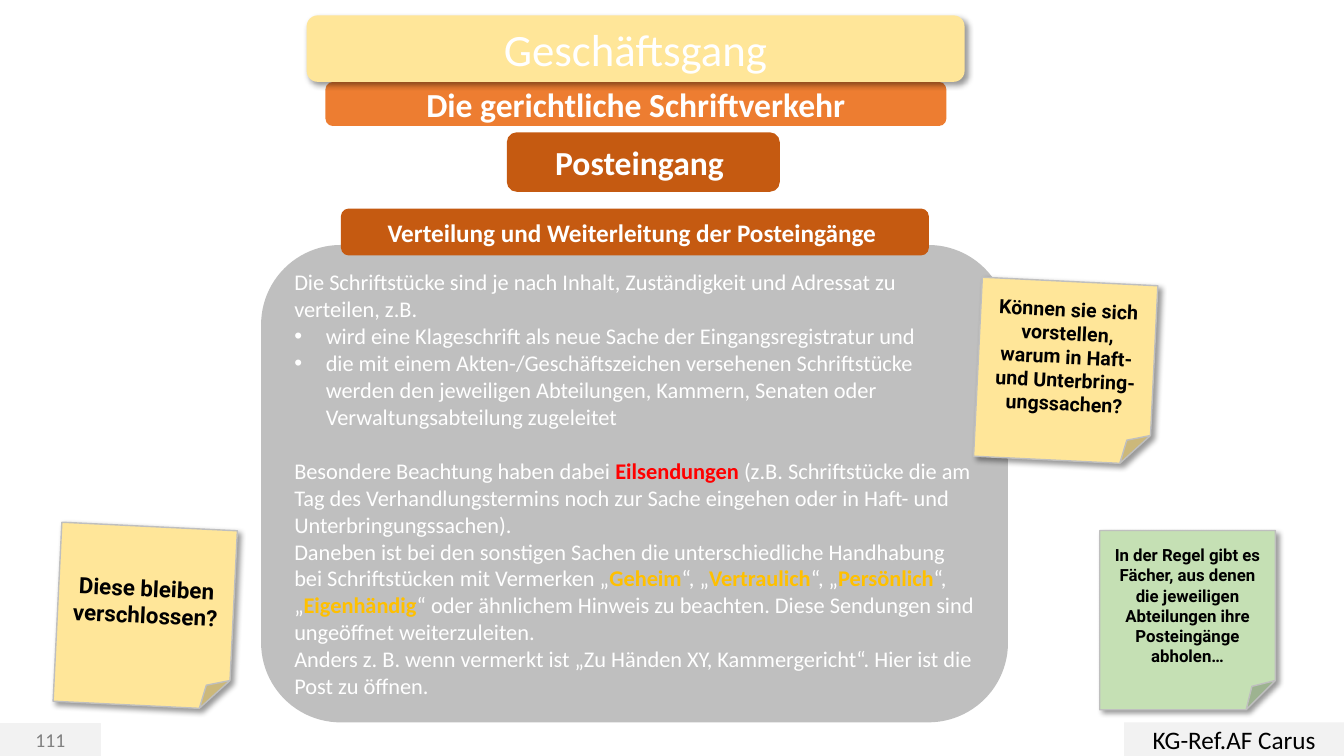
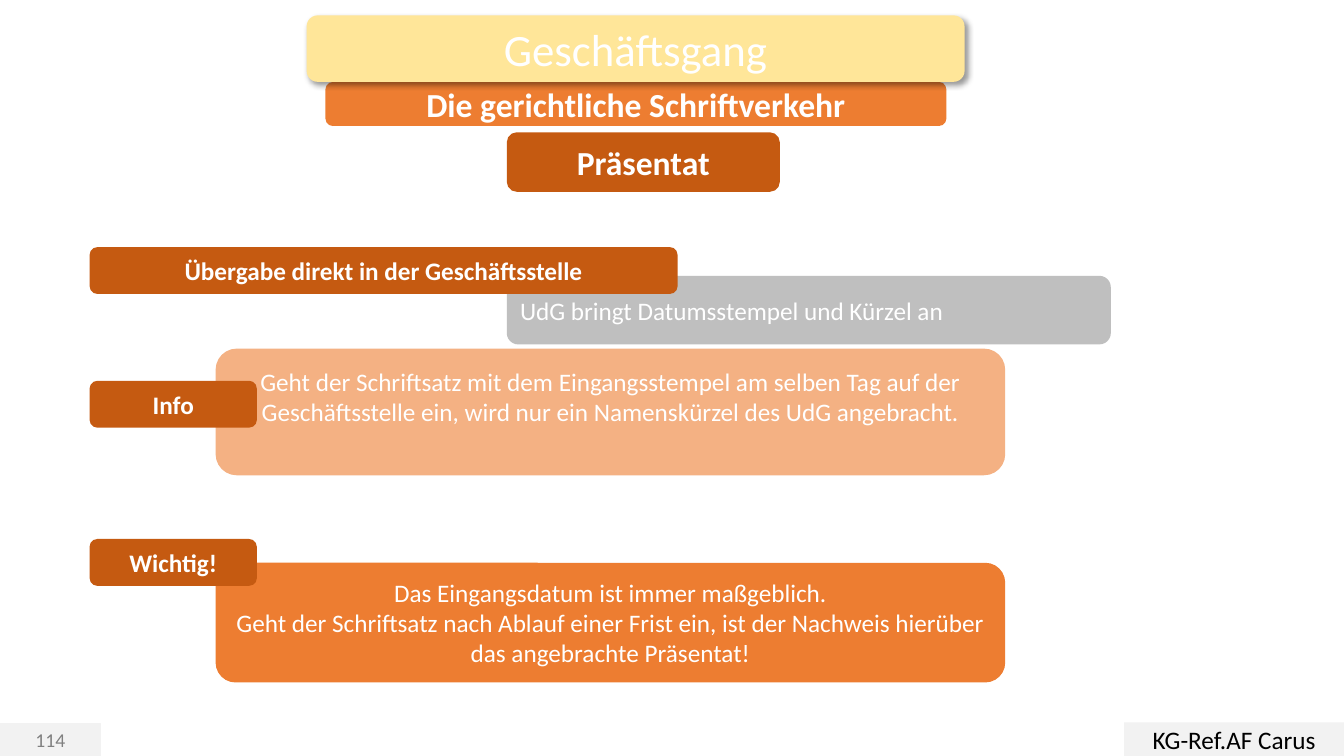
from dataclasses import dataclass

from lxml import etree
from pptx import Presentation
from pptx import util as u
from pptx.dml.color import RGBColor
from pptx.enum import shapes, text
from pptx.oxml import ns


@dataclass(frozen=True)
class Theme:
    font: str = "Calibri"
    note_font: str = "Roboto"
    white: str = "FFFFFF"
    black: str = "000000"
    grey: str = "BFBFBF"
    footer: str = "F2F2F2"
    number: str = "808080"
    yellow: str = "FFE699"
    green: str = "C5E0B4"
    peach: str = "F4B183"
    orange: str = "ED7D31"
    rust: str = "C55A11"
    red: str = "FF0000"
    gold: str = "FFC000"
    title_size: int = 32
    heading_size: int = 24
    text_size: int = 18
    body_size: int = 16
    small_size: int = 14
    tiny_size: int = 12


THEME = Theme()
ROUND = shapes.MSO_SHAPE.ROUNDED_RECTANGLE
PLAIN = shapes.MSO_SHAPE.RECTANGLE
NOTE = shapes.MSO_SHAPE.FOLDED_CORNER
CENTER, LEFT = text.PP_ALIGN.CENTER, text.PP_ALIGN.LEFT


def write(frame, paragraphs, size, color=THEME.white, bold=False, font=THEME.font, align=CENTER):
    """Fill a frame; a run is plain text or (text, colour) for a bold highlight."""
    frame.word_wrap = True
    frame.auto_size = text.MSO_AUTO_SIZE.NONE
    frame.vertical_anchor = text.MSO_ANCHOR.MIDDLE
    for index, runs in enumerate(paragraphs):
        paragraph = frame.add_paragraph() if index else frame.paragraphs[0]
        paragraph.alignment = align
        paragraph.space_before = u.Pt(0)
        for content in runs:
            highlighted = isinstance(content, tuple)
            run = paragraph.add_run()
            run.text = content[0] if highlighted else content
            run.font.name = font
            run.font.size = u.Pt(size)
            run.font.bold = bold or highlighted
            run.font.color.rgb = RGBColor.from_string(content[1] if highlighted else color)


def add_box(slide, geometry, bounds, fill, line=None, shadow=False):
    shape = slide.shapes.add_shape(geometry, *map(u.Pt, bounds))
    shape.fill.solid()
    shape.fill.fore_color.rgb = RGBColor.from_string(fill)
    if line:
        shape.line.color.rgb = RGBColor.from_string(line)
        shape.line.width = u.Pt(1)
    else:
        shape.line.fill.background()
    shape.shadow.inherit = False
    if shadow:
        effects = shape.element.spPr.find(ns.qn("a:effectLst"))
        outer = etree.SubElement(effects, ns.qn("a:outerShdw"), blurRad=str(u.Pt(4)),
                                 dist=str(u.Pt(3)), dir="2700000", algn="tl", rotWithShape="0")
        tint = etree.SubElement(outer, ns.qn("a:srgbClr"), val=THEME.black)
        etree.SubElement(tint, ns.qn("a:alpha"), val="40000")
    return shape


presentation = Presentation()
presentation.slide_width = u.Pt(960)
presentation.slide_height = u.Pt(540)

# Frame shared by both slides
TITLE_BOUNDS = (219, 11, 470, 47.5)
slides = []
for layout, number, topic in ((1, "111", "Posteingang "), (5, "114", "Präsentat")):
    slide = presentation.slides.add_slide(presentation.slide_layouts[layout])
    slides.append(slide)

    box = add_box(slide, PLAIN, (0, 517, 72, 23), THEME.footer, line=THEME.footer)
    write(box.text_frame, [[number]], THEME.small_size, THEME.number)
    box = add_box(slide, PLAIN, (803, 516, 157, 24), THEME.footer)
    write(box.text_frame, [["KG-Ref.AF Carus"]], THEME.text_size, THEME.black)
    box = add_box(slide, ROUND, (232.5, 58.5, 443.5, 31.5), THEME.orange)
    write(box.text_frame, [["Die gerichtliche Schriftverkehr"]], THEME.heading_size, bold=True)
    add_box(slide, ROUND, TITLE_BOUNDS, THEME.yellow, shadow=True)
    box = add_box(slide, ROUND, (362, 94.5, 195, 42.5), THEME.rust)
    write(box.text_frame, [[topic]], THEME.heading_size, bold=True)

    title = slide.shapes.title
    title.left, title.top, title.width, title.height = map(u.Pt, TITLE_BOUNDS)
    write(title.text_frame, [["Geschäftsgang"]], THEME.title_size)
    slide.shapes.element.append(title.element)  # in front of its band

incoming, stamp = slides

# Slide 1: distribution of incoming mail
add_box(incoming, ROUND, (186.5, 175, 533.5, 341), THEME.grey)
body = incoming.placeholders[1]
body.left, body.top, body.width, body.height = map(u.Pt, (203, 175, 500.5, 341))
write(body.text_frame, [
    ["Die Schriftstücke sind je nach Inhalt, Zuständigkeit und Adressat zu verteilen, z.B."],
    ["wird eine Klageschrift als neue Sache der Eingangsregistratur und"],
    ["die mit einem Akten-/Geschäftszeichen versehenen Schriftstücke werden den jeweiligen "
     "Abteilungen, Kammern, Senaten oder Verwaltungsabteilung zugeleitet"],
    ["Besondere Beachtung haben dabei ", ("Eilsendungen ", THEME.red),
     "(z.B. Schriftstücke die am Tag des Verhandlungstermins noch zur Sache eingehen "
     "oder in Haft- und Unterbringungssachen)."],
    ["Daneben ist bei den sonstigen Sachen die unterschiedliche Handhabung bei "
     "Schriftstücken mit Vermerken „", ("Geheim", THEME.gold), "“, „",
     ("Vertraulich", THEME.gold), "“, „", ("Persönlich", THEME.gold), "“, „",
     ("Eigenhändig", THEME.gold),
     "“ oder ähnlichem Hinweis zu beachten. Diese Sendungen sind ungeöffnet weiterzuleiten."],
    ["Anders z. B. wenn vermerkt ist „Zu Händen XY, Kammergericht“. Hier ist die Post zu öffnen."],
], THEME.body_size, align=LEFT)
body.text_frame.paragraphs[3].space_before = u.Pt(19.5)
for index, paragraph in enumerate(body.text_frame.paragraphs):
    bulleted = index in (1, 2)
    indent = u.Pt(22.5) if bulleted else 0
    properties = paragraph._p.get_or_add_pPr()
    properties.set("marL", str(indent))
    properties.set("indent", str(-indent))
    if bulleted:
        etree.SubElement(properties, ns.qn("a:buChar"), char="•")
    else:
        etree.SubElement(properties, ns.qn("a:buNone"))
incoming.shapes.element.append(body.element)  # in front of its panel

heading = add_box(incoming, ROUND, (243.5, 149, 420, 33.5), THEME.rust)
write(heading.text_frame, [["Verteilung und Weiterleitung der Posteingänge "]],
      THEME.text_size, bold=True)

for left, top, rotation, fill, size, content in (
    (698.5, 201, 2.8, THEME.yellow, THEME.small_size,
     "Können sie sich vorstellen, warum in Haft- und Unterbring-ungssachen?"),
    (785.5, 379, 0, THEME.green, THEME.tiny_size,
     "In der Regel gibt es Fächer, aus denen die jeweiligen Abteilungen ihre Posteingänge abholen…"),
    (41, 376, 2.8, THEME.yellow, THEME.body_size, "Diese bleiben verschlossen?"),
):
    note = add_box(incoming, NOTE, (left, top, 125.5, 128), fill, line=THEME.grey, shadow=True)
    note.rotation = rotation
    write(note.text_frame, [[content]], size, THEME.black, bold=True, font=THEME.note_font)

# Slide 2: each panel with the label that overlaps it
for panel_bounds, fill, align, bottom_inset, paragraphs, label_top, label_width, label in (
    ((362, 197, 431.5, 49), THEME.grey, LEFT, 3.6,
     [["UdG bringt Datumsstempel und Kürzel an"]],
     176.5, 420, "Übergabe direkt in der Geschäftsstelle"),
    ((154, 249, 564, 90.5), THEME.peach, CENTER, 25.5,
     [["Geht der Schriftsatz mit dem Eingangsstempel am selben Tag auf der Geschäftsstelle ein, "
       "wird nur ein Namenskürzel des UdG angebracht."]],
     272, 119.5, "Info"),
    ((154, 402, 564, 85.5), THEME.orange, CENTER, 3.6,
     [["Das Eingangsdatum ist immer maßgeblich."],
      ["Geht der Schriftsatz nach Ablauf einer Frist ein, ist der Nachweis hierüber "
       "das angebrachte Präsentat!"]],
     385, 119.5, "Wichtig!"),
):
    panel = add_box(stamp, ROUND, panel_bounds, fill)
    write(panel.text_frame, paragraphs, THEME.text_size, align=align)
    panel.text_frame.margin_bottom = u.Pt(bottom_inset)
    tag = add_box(stamp, ROUND, (64, label_top, label_width, 33.5), THEME.rust)
    write(tag.text_frame, [[label]], THEME.text_size, bold=True)

presentation.save("out.pptx")
